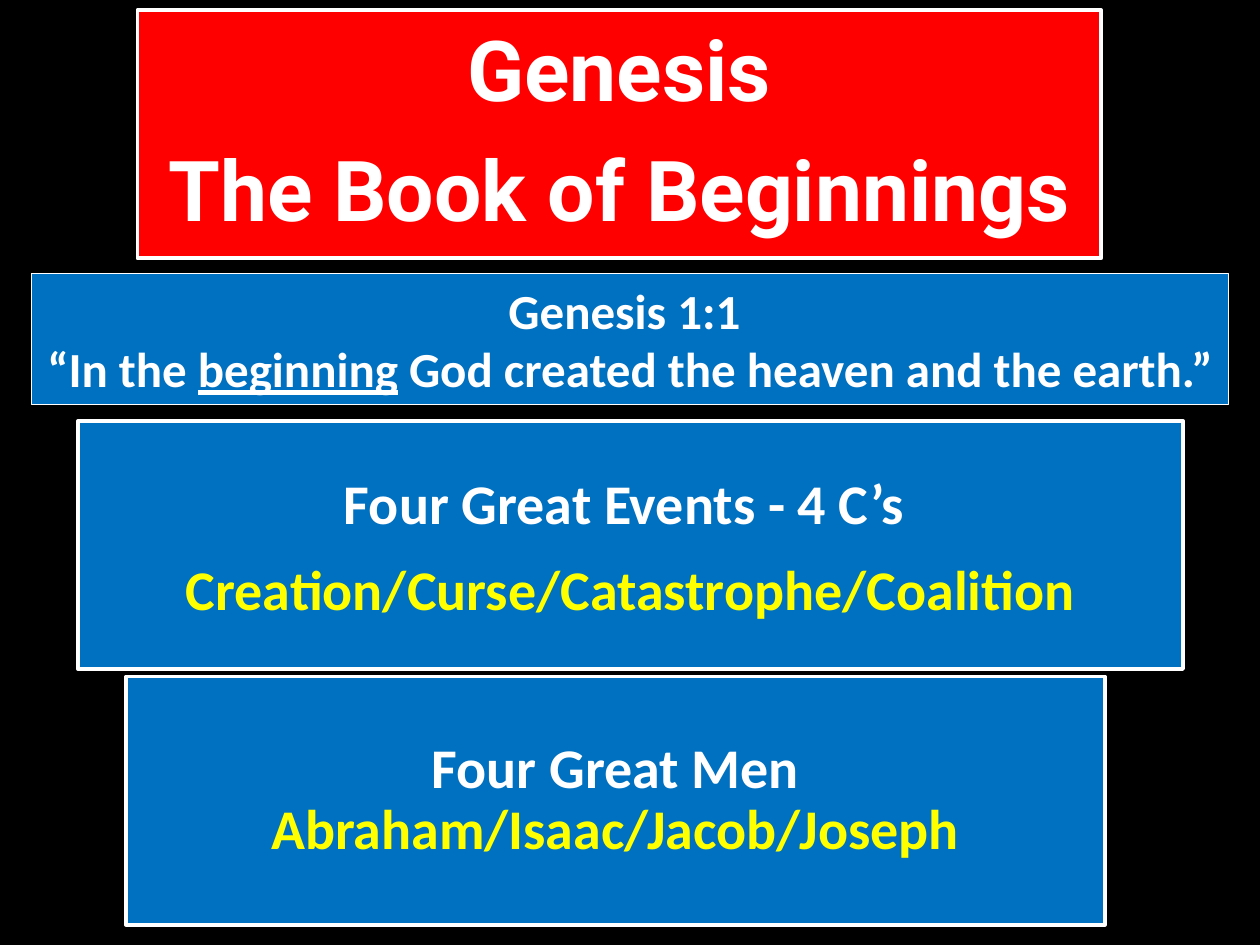
from pptx import Presentation
from pptx.dml.color import RGBColor
from pptx.enum.shapes import MSO_SHAPE
from pptx.enum.text import MSO_ANCHOR, MSO_AUTO_SIZE, PP_ALIGN
from pptx.util import Inches, Pt

WHITE, YELLOW, RED, BLUE = "FFFFFF", "FFFF00", "FF0000", "0070C0"


def color(hex_string):
    return RGBColor.from_string(hex_string)


def format_box(shape, bounds, fill, line_width, inset, font, size, spacing, space_after, paragraphs):
    shape.left, shape.top, shape.width, shape.height = [Inches(value) for value in bounds]
    shape.fill.solid()
    shape.fill.fore_color.rgb = color(fill)
    shape.line.color.rgb = color(WHITE)
    shape.line.width = Pt(line_width)
    text_frame = shape.text_frame
    text_frame.word_wrap = True
    text_frame.auto_size = MSO_AUTO_SIZE.NONE
    text_frame.vertical_anchor = MSO_ANCHOR.MIDDLE
    text_frame.margin_left = text_frame.margin_right = Inches(inset[0])
    text_frame.margin_top = text_frame.margin_bottom = Inches(inset[1])
    for index, runs in enumerate(paragraphs):
        paragraph = text_frame.add_paragraph() if index else text_frame.paragraphs[0]
        paragraph.alignment = PP_ALIGN.CENTER
        paragraph.line_spacing = spacing
        paragraph.space_before = Pt(0)
        paragraph.space_after = Pt(space_after)
        for text, text_color, underlined in runs:
            run = paragraph.add_run()
            run.text = text
            run.font.name = font
            run.font.size = Pt(size)
            run.font.bold = True
            run.font.underline = underlined
            run.font.color.rgb = color(text_color)


presentation = Presentation()
presentation.slide_width = Inches(10)
presentation.slide_height = Inches(7.5)
slide = presentation.slides.add_slide(presentation.slide_layouts[5])
slide.background.fill.solid()
slide.background.fill.fore_color.rgb = color("000000")

format_box(slide.shapes.title, (1.09, 0.08, 7.65, 1.97), RED, 2, (0.2, 0.2), "Roboto", 48, 0.9, 17, [
    [("Genesis", WHITE, False)],
    [("The Book of Beginnings", WHITE, False)],
])

events = [
    [("Four Great Events - 4 C’s ", WHITE, False)],
    [("Creation/Curse/Catastrophe/Coalition", YELLOW, False)],
]
men = [[("Four Great Men ", WHITE, False), ("Abraham/Isaac/Jacob/Joseph", YELLOW, False)]]
verse = [
    [("Genesis 1:1 ", WHITE, False)],
    [
        ("“In the ", WHITE, False),
        ("beginning", WHITE, True),
        (" God created the heaven and the earth.”", WHITE, False),
    ],
]
boxes = [
    ((0.62, 3.34, 8.77, 1.97), 2, (0.13, 0.13), 32, 1.0, 11, events),
    ((1, 5.37, 7.77, 1.97), 2, (0.13, 0.13), 32, 0.9, 11, men),
    ((0.25, 2.17, 9.5, 1.04), 0.75, (0.1, 0.05), 28, 1.0, 0, verse),
]
for bounds, line_width, inset, size, spacing, space_after, paragraphs in boxes:
    shape = slide.shapes.add_shape(MSO_SHAPE.RECTANGLE, 0, 0, 0, 0)
    shape.shadow.inherit = False
    format_box(shape, bounds, BLUE, line_width, inset, "Calibri", size, spacing, space_after, paragraphs)

presentation.save("out.pptx")
